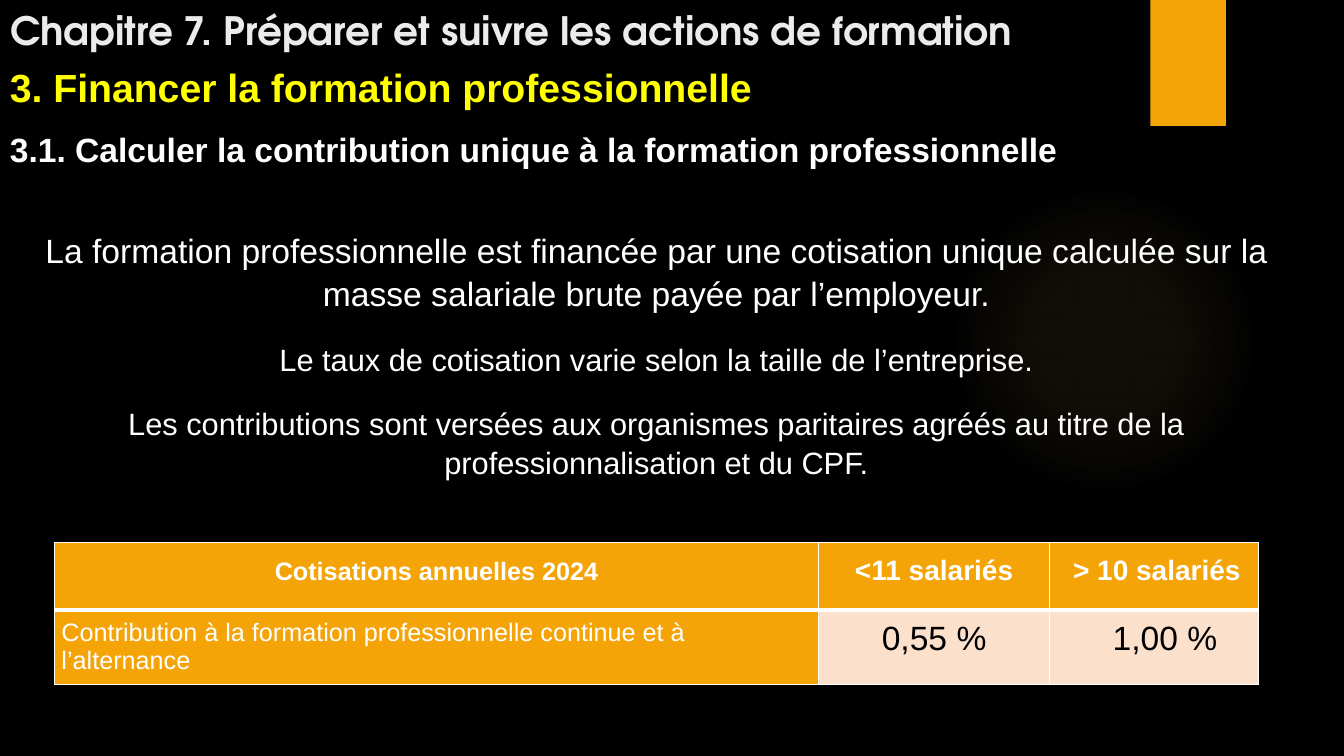
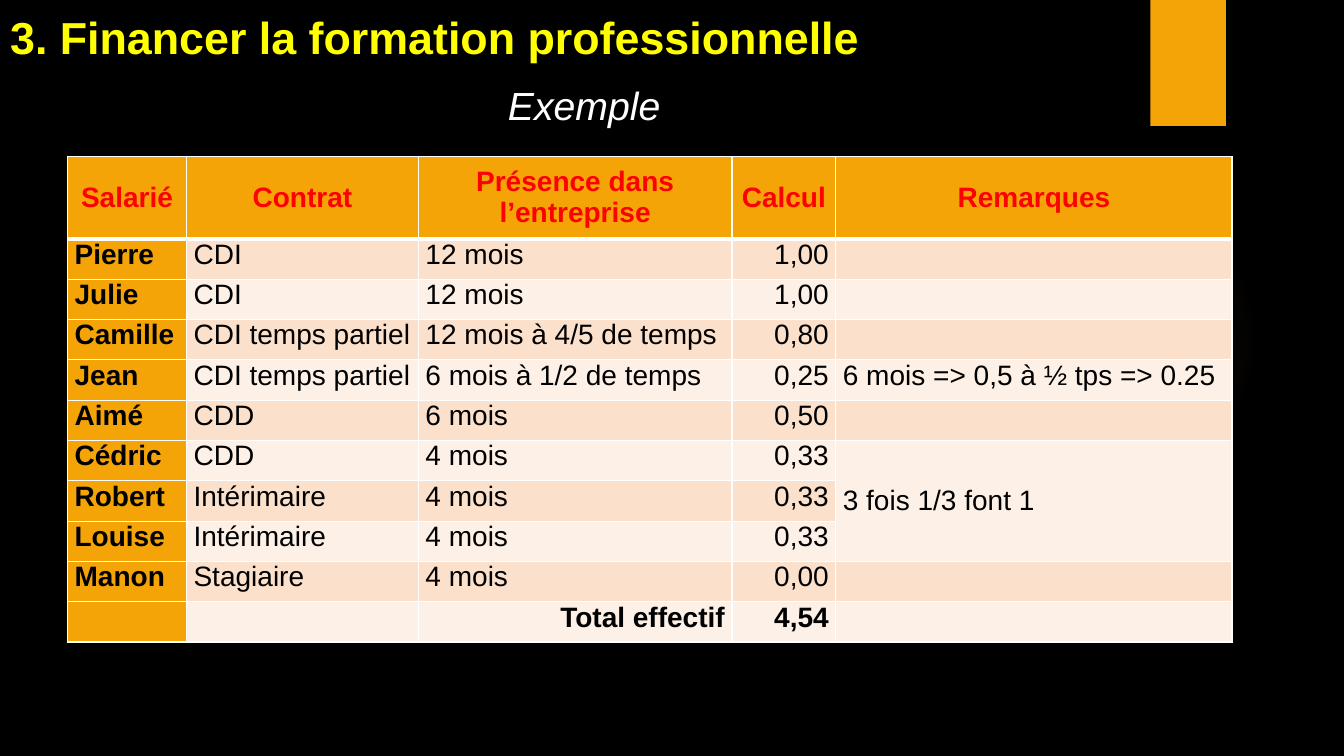
from dataclasses import dataclass

from lxml.etree import SubElement
from pptx import Presentation
from pptx.dml.color import RGBColor
from pptx.enum.shapes import MSO_SHAPE
from pptx.enum.text import MSO_ANCHOR, MSO_AUTO_SIZE, PP_ALIGN
from pptx.oxml import parse_xml
from pptx.oxml.ns import nsdecls, qn
from pptx.util import Pt

EMU_PER_PX = 9144
SECTION = "3. Financer la formation professionnelle"


@dataclass(frozen=True)
class Theme:
    black: str = "000000"
    white: str = "FFFFFF"
    chapter: str = "EBEBEB"
    yellow: str = "FFFF00"
    red: str = "FF0000"
    orange: str = "F5A408"
    glow: str = "FAC96A"
    band_dark: str = "FBE0CC"
    band_light: str = "FDF0E7"
    font: str = "Arial"
    chapter_font: str = "TeX Gyre Adventor"
    chapter_size: float = 27.9
    heading: int = 28
    large_heading: int = 32
    lead: int = 24
    body: int = 22
    cell: int = 20
    small_cell: int = 18


THEME = Theme()


def px(length):
    return length * EMU_PER_PX


def emu(box):
    return [px(length) for length in box]


def rgb(color):
    return RGBColor.from_string(color)


def style(para, size, color, bold=False, italic=False, font=THEME.font, align=PP_ALIGN.LEFT):
    para.alignment = align
    for span in para.runs:
        span.font.size = Pt(size)
        span.font.name = font
        span.font.bold = bold
        span.font.italic = italic
        span.font.color.rgb = rgb(color)


def add_text(page, box, text, size, color, anchor=MSO_ANCHOR.TOP, spacing=1, **look):
    frame = page.shapes.add_textbox(*emu(box)).text_frame
    frame.word_wrap = True
    frame.vertical_anchor = anchor
    frame.text = text
    for para in frame.paragraphs:
        para.line_spacing = spacing
        style(para, size, color, **look)
    return frame


def add_title(page, box, text, size, color, font=THEME.font):
    title = page.shapes.title
    title.left, title.top, title.width, title.height = emu(box)
    frame = title.text_frame
    frame.auto_size = MSO_AUTO_SIZE.NONE
    frame.word_wrap = True
    frame.vertical_anchor = MSO_ANCHOR.BOTTOM
    frame.text = text
    style(frame.paragraphs[0], size, color, bold=True, font=font)


def add_plain_shape(page, kind, box, color):
    shape = page.shapes.add_shape(kind, *emu(box))
    shape.shadow.inherit = False
    shape.line.fill.background()
    shape.fill.solid()
    shape.fill.fore_color.rgb = rgb(color)
    return shape


def fade_out(shape, color):
    stops = "".join(
        f'<a:gs pos="{position}000"><a:srgbClr val="{color}"><a:alpha val="{alpha}000"/></a:srgbClr></a:gs>'
        for position, alpha in ((0, 7), (36, 6), (69, 0))
    )
    gradient = parse_xml(
        f'<a:gradFill {nsdecls("a")}><a:gsLst>{stops}</a:gsLst><a:path path="circle">'
        '<a:fillToRect l="50000" t="50000" r="50000" b="50000"/></a:path></a:gradFill>'
    )
    solid = shape.element.spPr.find(qn("a:solidFill"))
    solid.getparent().replace(solid, gradient)


def decorate_master(deck, page):
    master = deck.slide_master
    master.background.fill.solid()
    master.background.fill.fore_color.rgb = rgb(THEME.black)
    glow = add_plain_shape(page, MSO_SHAPE.OVAL, (941, 183, 308, 308), THEME.glow)
    fade_out(glow, THEME.glow)
    tab = add_plain_shape(page, MSO_SHAPE.RECTANGLE, (1141, 0, 75, 125), THEME.orange)
    for number, shape in enumerate((glow, tab), 101):
        shape.element.xpath(".//p:cNvPr")[0].set("id", str(number))
        master.shapes.element.append(shape.element)


def set_borders(cell, top, bottom):
    properties = cell._tc.get_or_add_tcPr()
    for side, width in (("L", 1), ("R", 1), ("T", top), ("B", bottom)):
        line = SubElement(properties, qn(f"a:ln{side}"), w=str(Pt(width)))
        fill = SubElement(line, qn("a:solidFill"))
        SubElement(fill, qn("a:srgbClr"), val=THEME.white)


def add_table(page, left, top, columns, rows, texts):
    frame = page.shapes.add_table(
        len(rows), len(columns), *emu((left, top, sum(columns), sum(rows)))
    )
    table = frame.table
    for column, width in zip(table.columns, columns):
        column.width = px(width)
    for row, height in zip(table.rows, rows):
        row.height = px(height)
    for row_index, row_texts in enumerate(texts):
        for column_index, text in enumerate(row_texts):
            cell = table.cell(row_index, column_index)
            cell.margin_left = cell.margin_right = px(7)
            cell.margin_top = cell.margin_bottom = 0
            set_borders(cell, 3 if row_index == 1 else 1, 3 if row_index == 0 else 1)
            band = THEME.band_dark if row_index % 2 else THEME.band_light
            cell.fill.solid()
            cell.fill.fore_color.rgb = rgb(
                THEME.orange if row_index == 0 or column_index == 0 else band
            )
            cell.text_frame.text = text
    return table


def add_rate_table(page, left, top):
    table = add_table(page, left, top, (758, 229, 207), (67, 74), (
        ("Cotisations annuelles 2024", "<11 salariés", "> 10 salariés"),
        ("Contribution à la formation professionnelle continue et à l’alternance",
         "0,55 %", "1,00 %"),
    ))
    sizes = (
        (THEME.small_cell, THEME.cell, THEME.cell),
        (THEME.small_cell, THEME.lead, THEME.lead),
    )
    for row_index, row_sizes in enumerate(sizes):
        for column_index, size in enumerate(row_sizes):
            cell = table.cell(row_index, column_index)
            cell.vertical_anchor = MSO_ANCHOR.MIDDLE
            para = cell.text_frame.paragraphs[0]
            if row_index and not column_index:
                style(para, size, THEME.white)
                continue
            color = THEME.black if row_index else THEME.white
            style(para, size, color, bold=not row_index, align=PP_ALIGN.CENTER)
            para.line_spacing = Pt(14.4)
    table.cell(0, 2).margin_left = px(13)
    table.cell(1, 2).margin_left = px(29)


def add_staff_table(page, left, top):
    texts = (
        ("Salarié", "Contrat", "Présence dans\nl’entreprise", "Calcul", "Remarques"),
        ("Pierre", "CDI", "12 mois", "1,00", ""),
        ("Julie", "CDI", "12 mois", "1,00", ""),
        ("Camille", "CDI temps partiel", "12 mois à 4/5 de temps", "0,80", ""),
        ("Jean", "CDI temps partiel", "6 mois à 1/2 de temps", "0,25",
         "6 mois => 0,5 à ½ tps => 0.25"),
        ("Aimé", "CDD", "6 mois", "0,50", ""),
        ("Cédric", "CDD", "4 mois", "0,33", "3 fois 1/3 font 1"),
        ("Robert", "Intérimaire", "4 mois", "0,33", ""),
        ("Louise", "Intérimaire", "4 mois", "0,33", ""),
        ("Manon", "Stagiaire", "4 mois", "0,00", ""),
        ("", "", "Total effectif", "4,54", ""),
    )
    columns = (118, 230, 311, 103, 393)
    table = add_table(page, left, top, columns, [82] + [40] * 10, texts)
    last = len(texts) - 1
    for row_index in range(len(texts)):
        for column_index in range(len(columns)):
            cell = table.cell(row_index, column_index)
            header, total = row_index == 0, row_index == last
            align = PP_ALIGN.JUSTIFY
            if header:
                align = PP_ALIGN.CENTER
                cell.vertical_anchor = MSO_ANCHOR.MIDDLE
            elif column_index == 3 or total:
                align = PP_ALIGN.RIGHT
            for para in cell.text_frame.paragraphs:
                style(para, THEME.cell, THEME.red if header else THEME.black,
                      bold=header or total or column_index == 0, align=align)
    table.cell(6, 4).merge(table.cell(8, 4))
    table.cell(6, 4).vertical_anchor = MSO_ANCHOR.MIDDLE


def add_explanation(page, box):
    frame = add_text(
        page, box,
        "La formation professionnelle est financée par une cotisation unique calculée "
        "sur la masse salariale brute payée par l’employeur.\n"
        "Le taux de cotisation varie selon la taille de l’entreprise.\n"
        "Les contributions sont versées aux organismes paritaires agréés au titre de la "
        "professionnalisation et du CPF.",
        THEME.body, THEME.white, spacing=1.06, align=PP_ALIGN.CENTER,
    )
    lead, *others = frame.paragraphs
    style(lead, THEME.lead, THEME.white, align=PP_ALIGN.CENTER)
    for para in others:
        para.space_before = Pt(18)


def build_contribution_page(page):
    add_title(page, (0, 0, 1290, 58), "Chapitre 7. Préparer et suivre les actions de formation",
              THEME.chapter_size, THEME.chapter, THEME.chapter_font)
    add_text(page, (0, 57, 1290, 57), SECTION, THEME.heading, THEME.yellow,
             anchor=MSO_ANCHOR.BOTTOM, bold=True)
    add_text(page, (0, 121, 1117, 50),
             "3.1. Calculer la contribution unique à la formation professionnelle",
             THEME.lead, THEME.white, spacing=1.06, bold=True)
    add_explanation(page, (22, 221, 1258, 252))
    add_rate_table(page, 54, 538)


def build_example_page(page):
    add_title(page, (0, 9, 1290, 59), SECTION, THEME.large_heading, THEME.yellow)
    add_text(page, (494, 73, 186, 60), "Exemple", THEME.heading, THEME.white,
             spacing=1.06, italic=True)
    add_staff_table(page, 67, 155)


def main():
    deck = Presentation()
    deck.slide_width, deck.slide_height = px(1333), px(750)
    layout = deck.slide_layouts[5]
    pages = [deck.slides.add_slide(layout) for _ in range(2)]
    decorate_master(deck, pages[0])
    for page, build in zip(pages, (build_contribution_page, build_example_page)):
        build(page)
    deck.save("out.pptx")


if __name__ == "__main__":
    main()
